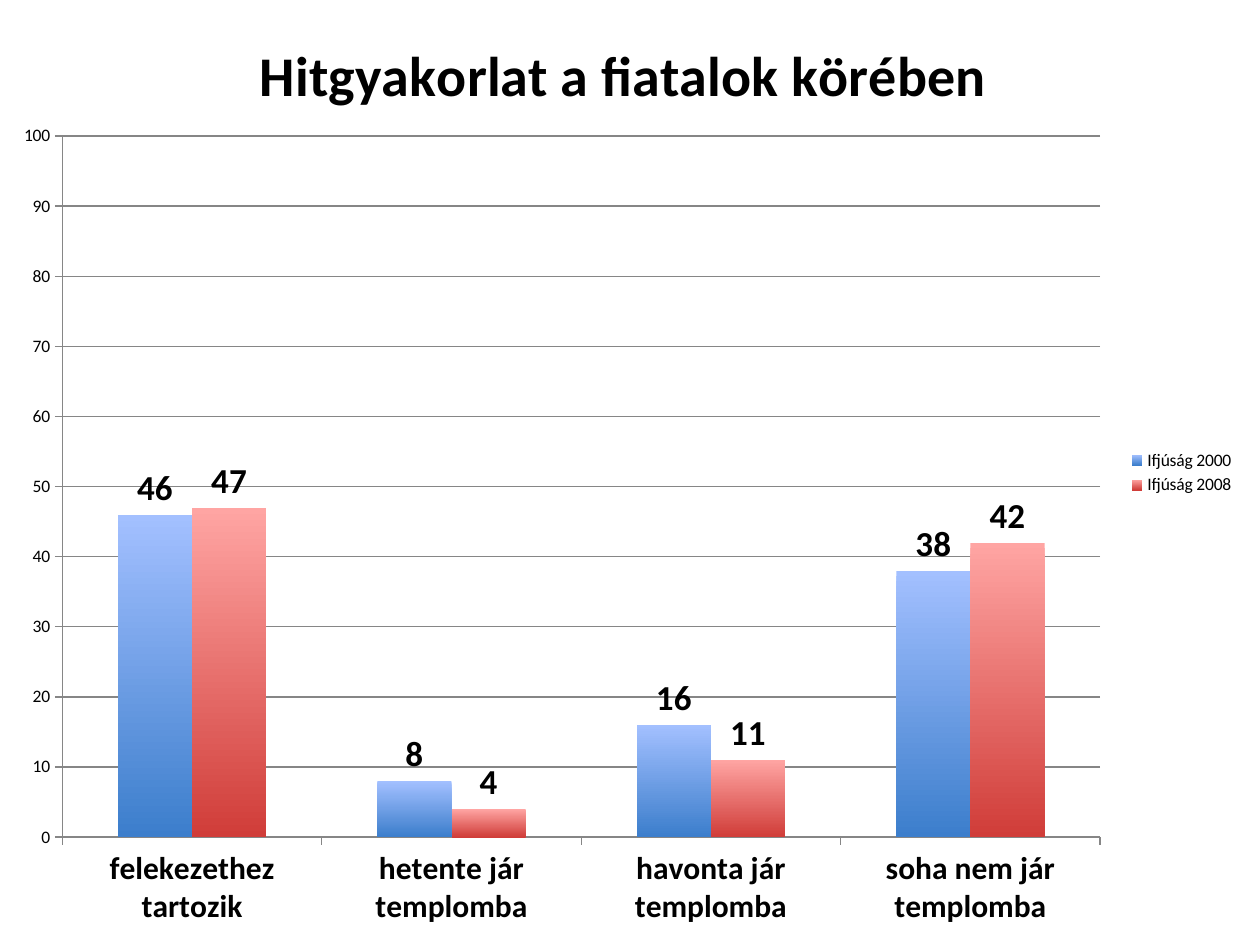
from lxml import etree
from pptx import Presentation
from pptx.chart.data import CategoryChartData as Data
from pptx.dml.color import RGBColor as RGB
from pptx.enum.chart import XL_CHART_TYPE as Kind, XL_LABEL_POSITION as Spot
from pptx.enum.chart import XL_LEGEND_POSITION as Side, XL_TICK_MARK as Tick
from pptx.oxml.ns import qn
from pptx.util import Inches, Pt

TITLE = "Hitgyakorlat a fiatalok körében"
GROUPS = ["felekezethez tartozik", "hetente jár templomba",
          "havonta jár templomba", "soha nem jár templomba"]
SERIES = {"Ifjúság 2000": (46, 8, 16, 38), "Ifjúság 2008": (47, 4, 11, 42)}

THEME = {
    "font": "Calibri", "ink": "000000", "line": "868686",
    "bars": [("A3C0FF", "3C7ECC"), ("FFA5A3", "D03D39")],
    "base": 10, "title": 32, "group": 18, "label": 20,
}
WIDE, HIGH = Inches(10), Inches(7.5)
CHART_SHARE = 0.99
PLOT = {"x": 0.05, "y": 0.144, "w": 0.832, "h": 0.742}  # shares of the chart


def style(font, size, bold=False):
    look = {"name": THEME["font"], "size": Pt(size), "bold": bold}
    for key, val in look.items():
        setattr(font, key, val)
    font.color.rgb = RGB.from_string(THEME["ink"])


def rule(fmt):
    """Thin grey line for axes and grid."""
    fmt.line.color.rgb = RGB.from_string(THEME["line"])
    fmt.line.width = Pt(0.75)


def place(chart):
    """Fix the inner plot area at the shares in PLOT."""
    area = chart.plots[0]._element.getparent()
    for old in area.findall(qn("c:layout")):
        area.remove(old)
    layout = etree.Element(qn("c:layout"))
    box = etree.SubElement(layout, qn("c:manualLayout"))
    parts = [("layoutTarget", "inner"), ("xMode", "edge"), ("yMode", "edge")]
    for tag, val in parts + list(PLOT.items()):
        etree.SubElement(box, qn("c:" + tag)).set("val", str(val))
    area.insert(0, layout)


def paint(bars, tones):
    fill = bars.format.fill
    fill.gradient()
    fill.gradient_angle = 270
    for stop, tone in zip(fill.gradient_stops, tones):
        stop.color.rgb = RGB.from_string(tone)
    bars.invert_if_negative = False
    tags = bars.data_labels
    tags.show_value = True
    tags.position = Spot.OUTSIDE_END
    style(tags.font, THEME["label"], True)


def build(slide):
    data = Data(number_format="#,##0")
    data.categories = GROUPS
    for name, vals in SERIES.items():
        data.add_series(name, vals)
    chart = slide.shapes.add_chart(
        Kind.COLUMN_CLUSTERED, 0, 0, int(WIDE * CHART_SHARE), HIGH, data).chart
    style(chart.font, THEME["base"])

    chart.has_title = True
    frame = chart.chart_title.text_frame
    frame.text = TITLE
    style(frame.paragraphs[0].runs[0].font, THEME["title"], True)
    chart.chart_title.include_in_layout = False

    chart.has_legend = True
    chart.legend.position = Side.RIGHT
    chart.legend.include_in_layout = False
    style(chart.legend.font, THEME["base"])

    groups, scale = chart.category_axis, chart.value_axis
    for axis, size, bold in ((groups, THEME["group"], True),
                             (scale, THEME["base"], False)):
        axis.major_tick_mark = Tick.OUTSIDE
        axis.minor_tick_mark = Tick.NONE
        style(axis.tick_labels.font, size, bold)
        rule(axis.format)
    limits = {"minimum_scale": 0, "maximum_scale": 100, "major_unit": 10,
              "has_major_gridlines": True}
    for key, val in limits.items():
        setattr(scale, key, val)
    scale.tick_labels.number_format = "#,##0"
    scale.tick_labels.number_format_is_linked = False
    rule(scale.major_gridlines.format)

    plot = chart.plots[0]
    for key, val in {"gap_width": 150, "overlap": 0,
                     "vary_by_categories": False}.items():
        setattr(plot, key, val)
    for bars, tones in zip(plot.series, THEME["bars"]):
        paint(bars, tones)
    place(chart)


def main():
    deck = Presentation()
    deck.slide_width, deck.slide_height = WIDE, HIGH
    build(deck.slides.add_slide(deck.slide_layouts[6]))
    deck.save("out.pptx")


if __name__ == "__main__":
    main()
